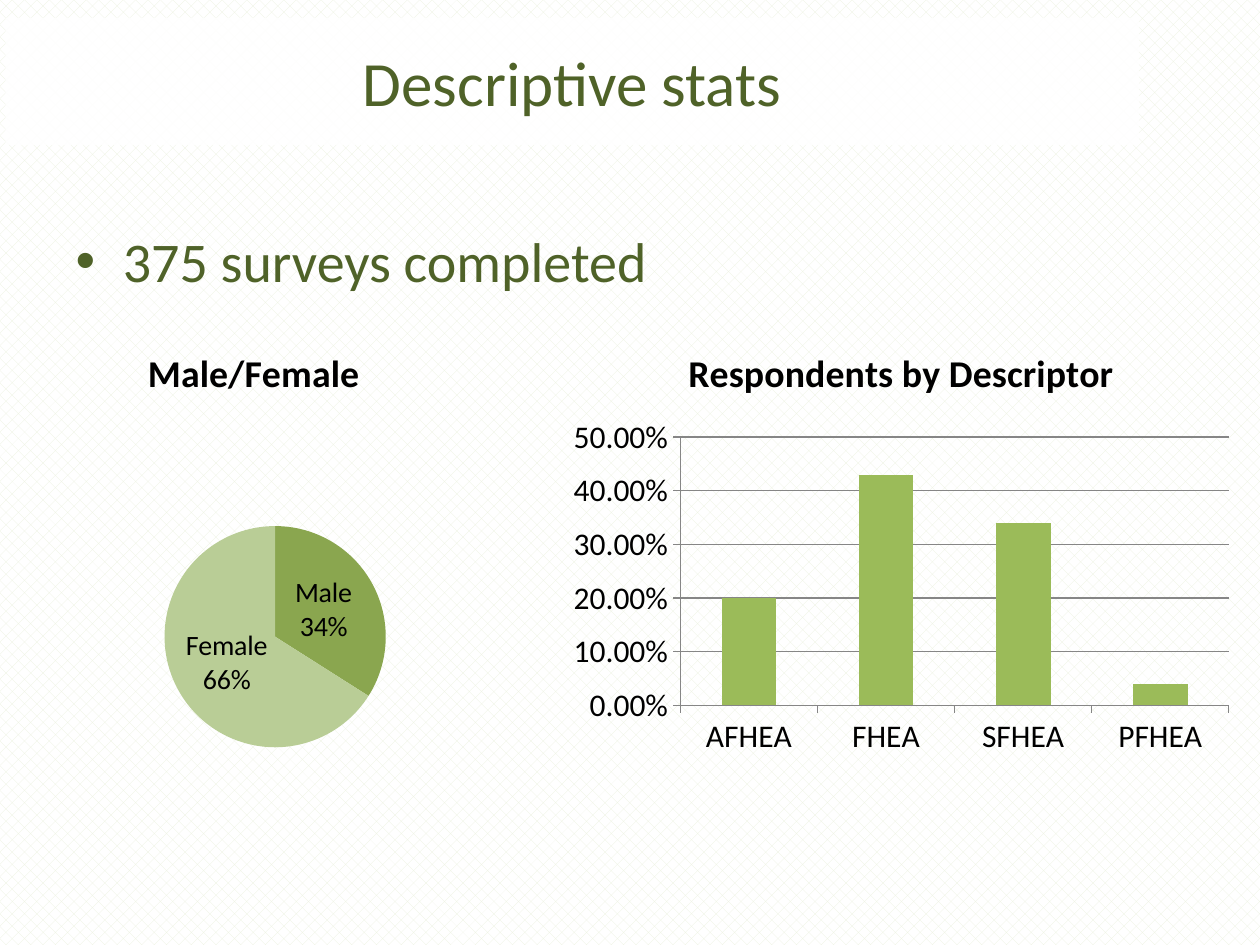
from lxml import etree
from pptx import Presentation
from pptx.chart.data import CategoryChartData
from pptx.dml.color import RGBColor
from pptx.enum import chart as charts, dml, text
from pptx.oxml import parse_xml
from pptx.oxml.ns import nsdecls, qn
from pptx.util import Pt

COLORS = {
    "paper": "FFFFFF", "weave": "EBF1DE", "heading": "4F6228",
    "male": "8AA64F", "female": "B9CD96", "bar": "9BBB59",
    "label": "000000", "grid": "868686",
}


def rgb(name):
    return RGBColor.from_string(COLORS[name])


class SlideBuilder:
    font_name = "Calibri"

    def __init__(self, slide):
        self.slide = slide

    def style(self, font, size, color, bold=False):
        font.name = self.font_name
        font.size = Pt(size)
        font.bold = bold
        font.color.rgb = rgb(color)

    def place(self, shape, left, top, width, height):
        shape.left, shape.top = Pt(left), Pt(top)
        shape.width, shape.height = Pt(width), Pt(height)

    def background(self):
        fill = self.slide.background.fill
        fill.patterned()
        fill.pattern = dml.MSO_PATTERN.PERCENT_30
        fill.fore_color.rgb = rgb("weave")
        fill.back_color.rgb = rgb("paper")

    def title(self, words, *box):
        shape = self.slide.shapes.title
        self.place(shape, *box)
        shape.fill.solid()
        shape.fill.fore_color.rgb = rgb("paper")
        color = shape.fill._xPr.find(".//" + qn("a:srgbClr"))
        etree.SubElement(color, qn("a:alpha"), val="90000")
        frame = shape.text_frame
        frame.text = words
        frame.vertical_anchor = text.MSO_ANCHOR.MIDDLE
        frame.paragraphs[0].alignment = text.PP_ALIGN.CENTER
        self.style(frame.paragraphs[0].font, 36, "heading")

    def body(self, words, *box):
        """Fill the body placeholder, which brings its own bullets."""
        shape = self.slide.placeholders[1]
        self.place(shape, *box)
        shape.text_frame.text = words
        self.style(shape.text_frame.paragraphs[0].font, 32, "heading")

    def chart(self, kind, title, series_name, values, number_format, *box):
        data = CategoryChartData(number_format=number_format)
        data.categories = values.keys()
        data.add_series(series_name, values.values())
        frame = self.slide.shapes.add_chart(kind, *map(Pt, box), data)
        chart = frame.chart
        self.style(chart.font, 18, "label")
        chart.has_legend = False
        chart.has_title = True
        chart.chart_title.text_frame.text = title
        paragraph = chart.chart_title.text_frame.paragraphs[0]
        self.style(paragraph.font, 21.6, "label", bold=True)
        return chart

    def pie(self, title, values, colors, layout, *box):
        chart = self.chart(charts.XL_CHART_TYPE.PIE, title, title, values, "General", *box)
        plot = chart.plots[0]
        for index, color in enumerate(colors):
            fill = plot.series[0].points[index].format.fill
            fill.solid()
            fill.fore_color.rgb = rgb(color)
        plot.has_data_labels = True
        labels = plot.data_labels
        labels.show_category_name = labels.show_percentage = True
        labels.show_value = False
        labels.number_format, labels.number_format_is_linked = "0%", False
        labels.position = charts.XL_LABEL_POSITION.CENTER
        self.style(labels.font, 16, "label")
        self.plot_layout(chart, *layout)

    def plot_layout(self, chart, x, y, width, height):
        """Fix the inner plot area, in fractions of the chart."""
        area = chart._chartSpace.chart.plotArea
        for automatic in area.findall(qn("c:layout")):
            area.remove(automatic)
        sizes = "".join(f'<c:{tag} val="{value}"/>' for tag, value in
                        zip("xywh", (x, y, width, height)))
        area.insert(0, parse_xml(
            f'<c:layout {nsdecls("c")}><c:manualLayout><c:layoutTarget val="inner"/>'
            f'<c:xMode val="edge"/><c:yMode val="edge"/>{sizes}</c:manualLayout></c:layout>'))

    def columns(self, title, series_name, values, *box):
        chart = self.chart(charts.XL_CHART_TYPE.COLUMN_CLUSTERED, title, series_name,
                           values, "0.00%", *box)
        plot = chart.plots[0]
        plot.gap_width = 150
        plot.vary_by_categories = False
        fill = plot.series[0].format.fill
        fill.solid()
        fill.fore_color.rgb = rgb("bar")
        value_axis = chart.value_axis
        value_axis.minimum_scale, value_axis.maximum_scale = 0, 0.5
        value_axis.major_unit = 0.1
        value_axis.has_major_gridlines = True
        value_axis.tick_labels.number_format = "0.00%"
        value_axis.tick_labels.number_format_is_linked = False
        for axis in (chart.category_axis, value_axis):
            axis.major_tick_mark = charts.XL_TICK_MARK.OUTSIDE
        for part in (chart.category_axis, value_axis, value_axis.major_gridlines):
            part.format.line.color.rgb = rgb("grid")
            part.format.line.width = Pt(0.75)


def main():
    presentation = Presentation()
    presentation.slide_width, presentation.slide_height = Pt(720), Pt(540)
    builder = SlideBuilder(presentation.slides.add_slide(presentation.slide_layouts[1]))
    builder.background()
    builder.title("Descriptive stats", 3, 10, 648, 73)
    builder.body("375 surveys completed", 36, 126, 648, 356)
    builder.pie("Male/Female", {"Male": 34, "Female": 66}, ("male", "female"),
                (0.31, 0.43, 0.47, 0.47), 9, 185, 272, 269)
    builder.columns("Respondents by Descriptor", "Series 1",
                    {"AFHEA": 0.2, "FHEA": 0.43, "SFHEA": 0.34, "PFHEA": 0.04},
                    320, 185, 390, 252)
    presentation.save("out.pptx")


if __name__ == "__main__":
    main()
